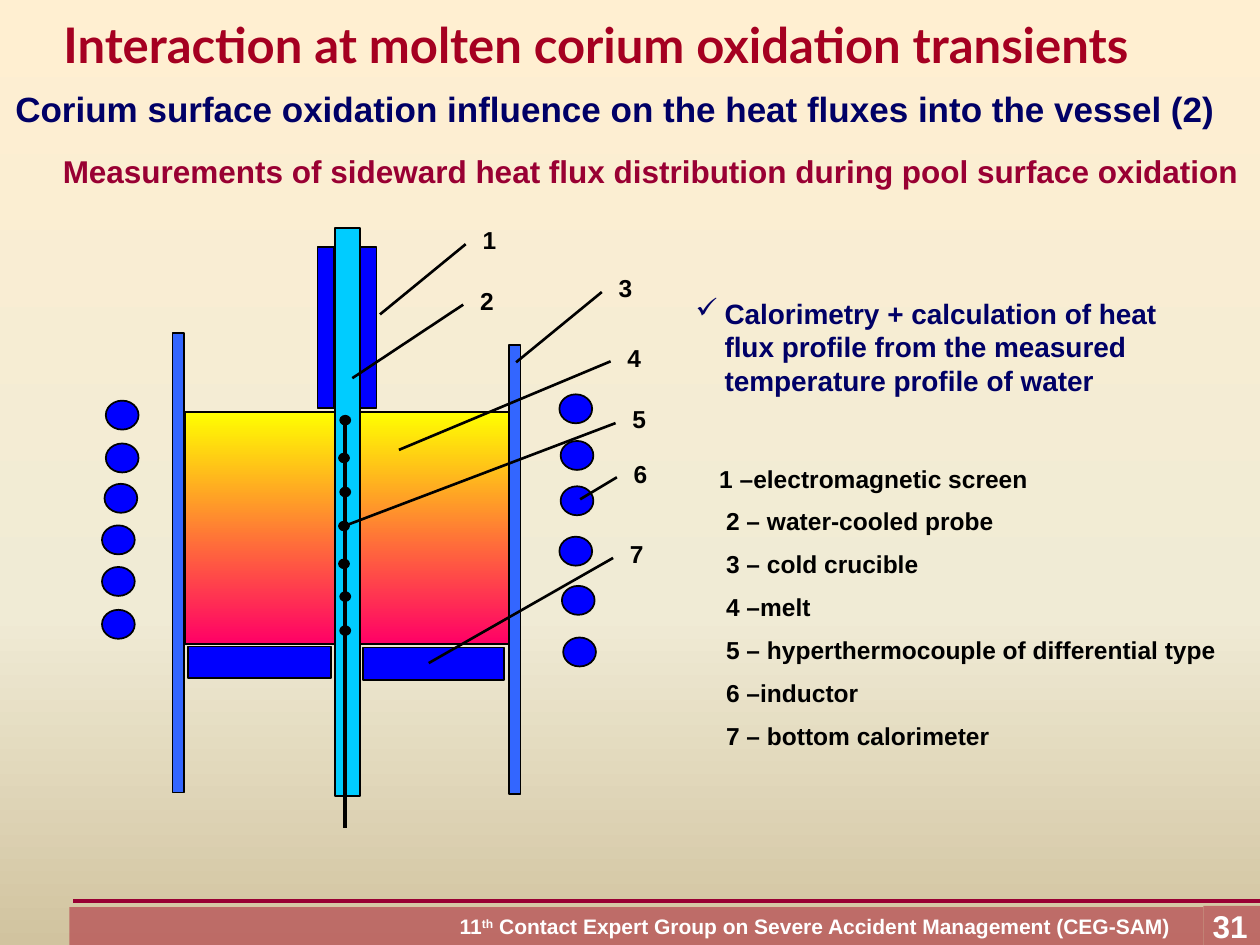
from copy import deepcopy
from lxml.etree import SubElement
from pptx import Presentation
from pptx.dml.color import RGBColor
from pptx.enum.shapes import MSO_CONNECTOR, MSO_SHAPE
from pptx.enum.text import MSO_ANCHOR, PP_ALIGN
from pptx.oxml.ns import qn
from pptx.util import Inches, Pt

CRIMSON = RGBColor(0xA5, 0x00, 0x21)
MAROON = RGBColor(0x99, 0x00, 0x33)
NAVY = RGBColor(0x00, 0x00, 0x66)
BLACK = RGBColor(0x00, 0x00, 0x00)
WHITE = RGBColor(0xFF, 0xFF, 0xFF)
BLUE = RGBColor(0x00, 0x00, 0xFF)
WALL_BLUE = RGBColor(0x33, 0x66, 0xFF)
PROBE_CYAN = RGBColor(0x00, 0xCC, 0xFF)
MELT_TOP = RGBColor(0xFF, 0xFF, 0x00)
MELT_BOTTOM = RGBColor(0xFF, 0x00, 0x66)
SKY = RGBColor(0xFF, 0xEF, 0xD1)
SAND = RGBColor(0xF0, 0xEB, 0xD5)
EARTH = RGBColor(0xD1, 0xC3, 0x9F)


def add_block(kind, left, top, width, height, color=None, outline=1):
    shape = slide.shapes.add_shape(kind, Inches(left), Inches(top), Inches(width), Inches(height))
    shape.shadow.inherit = False
    if color is None:
        shape.fill.background()
    else:
        shape.fill.solid()
        shape.fill.fore_color.rgb = color
    if outline:
        shape.line.color.rgb = BLACK
        shape.line.width = Pt(outline)
    else:
        shape.line.fill.background()
    return shape


def write(shape, lines, size, color, font="Arial", align=PP_ALIGN.LEFT,
          anchor=MSO_ANCHOR.TOP, inset=(0.1, 0.05), gap=0):
    frame = shape.text_frame
    frame.word_wrap = True
    frame.vertical_anchor = anchor
    frame.margin_left = frame.margin_right = Inches(inset[0])
    frame.margin_top = frame.margin_bottom = Inches(inset[1])
    for index, line in enumerate(lines):
        paragraph = frame.add_paragraph() if index else frame.paragraphs[0]
        paragraph.alignment = align
        paragraph.space_before = Pt(gap if index else 0)
        for text in line:
            run = paragraph.add_run()
            run.text = text
            run.font.name = font
            run.font.size = Pt(size)
            run.font.bold = True
            run.font.color.rgb = color
    return frame.paragraphs[0]


presentation = Presentation()
presentation.slide_width = Inches(10)
presentation.slide_height = Inches(7.5)
slide = presentation.slides.add_slide(presentation.slide_layouts[5])

background = slide.background.fill
background.gradient()
background.gradient_angle = 270
stop_list = slide.element.find(".//" + qn("a:gsLst"))
stop_list.insert(1, deepcopy(stop_list[0]))
for stop, color, position in zip(background.gradient_stops, (SKY, SAND, EARTH), (0, 0.65, 1)):
    stop.color.rgb = color
    stop.position = position

title = slide.shapes.title
title.left, title.top, title.width, title.height = Inches(0), Inches(0), Inches(9.55), Inches(0.7)
write(title, [["Interaction at molten corium oxidation transients "]], 28, CRIMSON,
      "Lato", PP_ALIGN.CENTER, MSO_ANCHOR.MIDDLE)

for start, end, color, width in [
    ((0.58, 7.15), (10, 7.15), MAROON, 2.25),
    ((2.74, 6.57), (2.74, 3.34), BLACK, 2),
]:
    connector = slide.shapes.add_connector(
        MSO_CONNECTOR.STRAIGHT, *[Inches(value) for value in start + end])
    connector.line.color.rgb = color
    connector.line.width = Pt(width)
    SubElement(connector.element.spPr, qn("a:effectLst"))
thermocouple_line = connector

footer = add_block(MSO_SHAPE.RECTANGLE, 0.55, 7.2, 9, 0.3, CRIMSON, 0)
page_box = add_block(MSO_SHAPE.RECTANGLE, 9.55, 7.19, 0.45, 0.31, CRIMSON, 0)
for shape in (footer, page_box):
    color_element = shape.element.spPr.find(".//" + qn("a:srgbClr"))
    SubElement(color_element, qn("a:alpha")).set("val", "45000")
paragraph = write(footer, [["11", "th", " Contact Expert Group on Severe Accident Management (CEG-SAM)"]],
                  12, WHITE)
paragraph.runs[1].font._element.set("baseline", "30000")
paragraph._p.get_or_add_pPr().set("marL", str(Inches(3)))
write(page_box, [["31"]], 18, WHITE, align=PP_ALIGN.RIGHT, anchor=MSO_ANCHOR.MIDDLE)
page_box.text_frame.word_wrap = False

subtitle = slide.shapes.add_textbox(Inches(0), Inches(0.51), Inches(9.77), Inches(0.7))
write(subtitle, [["Corium surface oxidation influence on the heat fluxes into the vessel (2)"]],
      20, NAVY, align=PP_ALIGN.CENTER, anchor=MSO_ANCHOR.MIDDLE)

heading = slide.shapes.add_textbox(Inches(0), Inches(1.16), Inches(10), Inches(0.73))
paragraph = write(
    heading, [["Measurements of sideward heat flux distribution during pool surface oxidation"]], 18, MAROON)
properties = paragraph._p.get_or_add_pPr()
properties.set("marL", str(Inches(0.38)))
properties.set("indent", str(Inches(0.02)))

legend = slide.shapes.add_textbox(Inches(5.61), Inches(3.63), Inches(4.39), Inches(3.01))
write(legend, [
    ["1 –electromagnetic screen"],
    [" 2 – water-cooled probe"],
    [" 3 – cold crucible"],
    [" 4 –melt"],
    [" 5 – hyperthermocouple of differential type"],
    [" 6 –inductor"],
    [" 7 – bottom calorimeter"],
], 14, BLACK, gap=7.7)

for left, top, height in [(1.37, 2.64, 3.65), (4.04, 2.74, 3.56)]:
    add_block(MSO_SHAPE.RECTANGLE, left, top, 0.09, height, WALL_BLUE)

melt = add_block(MSO_SHAPE.RECTANGLE, 1.47, 3.27, 2.57, 1.84, MELT_TOP)
melt.fill.gradient()
melt.fill.gradient_angle = 270
for stop, color, position in zip(melt.fill.gradient_stops, (MELT_TOP, MELT_BOTTOM), (0, 1)):
    stop.color.rgb = color
    stop.position = position

add_block(MSO_SHAPE.RECTANGLE, 2.66, 1.81, 0.2, 4.51, PROBE_CYAN)
for left, top, width, height in [
    (1.49, 5.13, 1.14, 0.25), (2.88, 5.14, 1.12, 0.26),
    (2.52, 1.96, 0.13, 1.28), (2.86, 1.96, 0.13, 1.28),
]:
    add_block(MSO_SHAPE.RECTANGLE, left, top, width, height, BLUE)

slide.shapes._spTree.append(thermocouple_line.element)
for left, top in [(2.7, 3.3), (2.69, 3.6), (2.7, 3.87), (2.69, 4.14), (2.69, 4.44), (2.7, 4.7), (2.7, 4.97)]:
    add_block(MSO_SHAPE.FLOWCHART_CONNECTOR, left, top, 0.08, 0.07, BLACK)

for left, top in [
    (4.44, 3.13), (4.45, 3.5), (4.45, 3.86), (4.44, 4.26), (4.46, 4.65), (4.47, 5.06),
    (0.84, 3.18), (0.84, 3.52), (0.83, 3.84), (0.81, 4.17), (0.81, 4.5), (0.81, 4.84),
]:
    add_block(MSO_SHAPE.FLOWCHART_CONNECTOR, left, top, 0.26, 0.23, BLUE)

for label, left, top, width, start_x, end_y, end_x in [
    ("1", 3.81, 1.78, 0.54, -0.21, 2.17, -1.47),
    ("2", 3.79, 2.26, 0.54, -0.21, 2.25, -1.84),
    ("3", 4.89, 2.16, 0.54, -0.21, 2.17, -1.47),
    ("4", 4.96, 2.71, 0.54, -0.21, 2.61, -3.32),
    ("5", 5, 3.2, 0.44, -0.26, 2.93, -5.1),
    ("6", 5.01, 3.63, 0.54, -0.21, 1.01, -0.75),
    ("7", 4.98, 4.27, 0.54, -0.21, 3.01, -2.92),
]:
    callout = add_block(MSO_SHAPE.LINE_CALLOUT_1_NO_BORDER, left, top, width, 0.33, outline=1.5)
    for index, value in enumerate((0.48, start_x, end_y, end_x)):
        callout.adjustments[index] = value
    write(callout, [[label]], 14, BLACK, inset=(0.02, 0.01))

method = slide.shapes.add_textbox(Inches(5.5), Inches(2.34), Inches(4.15), Inches(0.83))
paragraph = write(
    method,
    [["Calorimetry + calculation of heat flux profile from the measured temperature profile of water"]],
    16, NAVY, inset=(0.02, 0.01))
properties = paragraph._p.get_or_add_pPr()
properties.set("marL", str(Inches(0.23)))
properties.set("indent", str(Inches(-0.23)))
SubElement(properties, qn("a:buChar")).set("char", "✓")

presentation.save("out.pptx")
